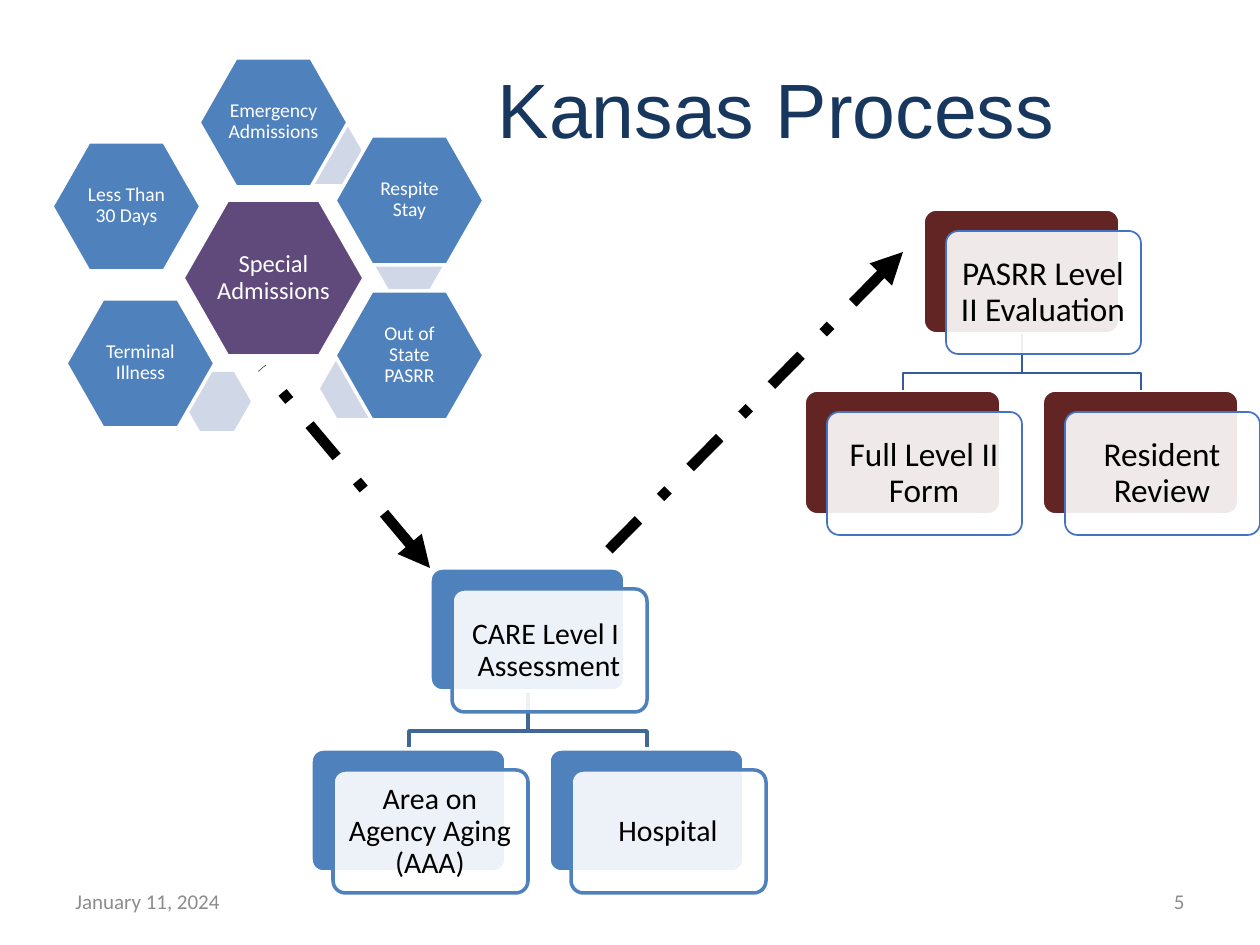
from dataclasses import dataclass
from typing import Optional

from lxml.etree import SubElement
from pptx import Presentation
from pptx.dml.color import RGBColor
from pptx.enum.dml import MSO_LINE
from pptx.enum.shapes import MSO_CONNECTOR, MSO_SHAPE
from pptx.enum.text import MSO_ANCHOR, PP_ALIGN
from pptx.oxml.ns import qn
from pptx.util import Pt

SCALE = 914400 / 126
HEX = {
    "white": "FFFFFF", "black": "000000", "navy": "17375E", "gray": "8C8C8C",
    "blue": "4F81BD", "pale": "D0D8E8", "purple": "604A7B", "maroon": "632523",
    "royal": "4472C4", "steel": "3F6797", "cobalt": "365B9D",
}


@dataclass
class Box:
    x: int
    y: int
    w: int
    h: int

    def emu(self) -> list[int]:
        return [px(v) for v in (self.x, self.y, self.w, self.h)]


@dataclass
class Petal:
    text: str
    x: int
    y: int
    link: Optional[tuple[int, int]] = None


@dataclass
class Tree:
    x: int
    y: int
    root: str
    kids: tuple[str, str]
    back: str
    edge: str
    wire: str
    width: int
    size: int
    inset: int


PETALS = [
    Petal("Emergency Admissions", 199, 58, (296, 125)),
    Petal("Respite Stay", 335, 136, (375, 236)),
    Petal("Out of State PASRR", 335, 291, (320, 359)),
    Petal("Terminal Illness", 66, 299, (183, 372)),
    Petal("Less Than 30 Days", 52, 142),
]
CARE = Tree(430, 568, "CARE Level I \nAssessment",
            ("Area on Agency Aging (AAA)", "Hospital"),
            "blue", "blue", "steel", 2, 17, 9)
PASRR = Tree(924, 210, "PASRR Level II Evaluation ",
             ("Full Level II Form", "Resident Review"),
             "maroon", "royal", "cobalt", 1, 19, 10)
CARD_W, CARD_H = 195, 123
KID_DX, KID_DY = 119, 181


def px(n: float) -> int:
    return round(n * SCALE)


def rgb(name: str) -> RGBColor:
    return RGBColor.from_string(HEX[name])


def stroke(shape, color: str, width: int) -> None:
    shape.line.color.rgb = rgb(color)
    shape.line.width = Pt(width)


def add_text(shapes, box: Box, text: str, size: float, color: str,
             align=PP_ALIGN.CENTER, font: str = "Calibri",
             inset: Optional[int] = None, space: Optional[float] = None):
    frame = shapes.add_textbox(*box.emu()).text_frame
    frame.word_wrap = True
    frame.vertical_anchor = MSO_ANCHOR.MIDDLE
    if inset is not None:
        frame.margin_left = frame.margin_right = px(inset)
        frame.margin_top = frame.margin_bottom = px(inset)
    para = frame.paragraphs[0]
    para.text = text
    para.alignment = align
    para.line_spacing = space
    para.font.name = font
    para.font.size = Pt(size)
    para.font.color.rgb = rgb(color)
    return frame


def add_block(shapes, kind, box: Box, adj: float, fill: str,
              edge: Optional[str] = None, width: int = 0):
    shape = shapes.add_shape(kind, *box.emu())
    shape.shadow.inherit = False
    shape.adjustments[0] = adj
    shape.fill.solid()
    shape.fill.fore_color.rgb = rgb(fill)
    if edge:
        stroke(shape, edge, width)
    else:
        shape.line.fill.background()
    return shape


def add_hex(shapes, box: Box, text: str, size: float, fill: str) -> None:
    """Draw a hexagon with a label box two thirds its size in the middle."""
    add_block(shapes, MSO_SHAPE.HEXAGON, box, 0.286, fill, "white", 2)
    w, h = round(box.w * 2 / 3), round(box.h * 2 / 3)
    label = Box(box.x + (box.w - w) // 2, box.y + (box.h - h) // 2, w, h)
    add_text(shapes, label, text, size, "white", inset=3, space=0.9)


def add_hub(slide) -> None:
    shapes = slide.shapes.add_group_shape().shapes
    add_hex(shapes, Box(183, 200, 181, 156), "Special Admissions", 14, "purple")
    for petal in PETALS:
        if petal.link:
            add_block(shapes, MSO_SHAPE.HEXAGON, Box(*petal.link, 68, 59), 0.289, "pale")
        add_hex(shapes, Box(petal.x, petal.y, 149, 129), petal.text, 11.2, "blue")


def add_card(shapes, tree: Tree, x: int, y: int, text: str) -> None:
    """Draw a solid card, a nearly opaque white one over it, and the text."""
    kind = MSO_SHAPE.ROUNDED_RECTANGLE
    add_block(shapes, kind, Box(x, y, CARD_W, CARD_H), 0.1,
              tree.back, "white", tree.width)
    front = add_block(shapes, kind, Box(x + 22, y + 21, CARD_W, CARD_H), 0.1,
                      "white", tree.edge, tree.width)
    tint = front._element.spPr.find(qn("a:solidFill"))[0]
    SubElement(tint, qn("a:alpha"), val="90000")
    add_text(shapes, Box(x + 25, y + 24, 188, 117), text, tree.size, "black",
             inset=tree.inset, space=0.9)


def add_wire(shapes, tree: Tree, dx: int) -> None:
    x, top, mid = tree.x + 98, tree.y + CARD_H + 1, tree.y + 163
    path = shapes.build_freeform(x, top, scale=SCALE)
    path.add_line_segments(
        [(x, mid), (x + dx, mid), (x + dx, tree.y + KID_DY)], close=False)
    wire = path.convert_to_shape()
    wire.shadow.inherit = False
    wire.fill.background()
    stroke(wire, tree.wire, tree.width)


def add_tree(slide, tree: Tree) -> None:
    shapes = slide.shapes.add_group_shape().shapes
    for dx in (KID_DX, -KID_DX):
        add_wire(shapes, tree, dx)
    add_card(shapes, tree, tree.x, tree.y, tree.root)
    for dx, text in zip((-KID_DX, KID_DX), tree.kids):
        add_card(shapes, tree, tree.x + dx, tree.y + KID_DY, text)


def add_arrow(slide, tip: tuple[int, int], tail: tuple[int, int]) -> None:
    ends = [px(v) for v in tip + tail]
    arrow = slide.shapes.add_connector(MSO_CONNECTOR.STRAIGHT, *ends)
    stroke(arrow, "black", 6)
    arrow.line.dash_style = MSO_LINE.DASH_DOT
    SubElement(arrow.line._get_or_add_ln(), qn("a:headEnd"), type="triangle")
    SubElement(arrow._element.spPr, qn("a:effectLst"))


def main() -> None:
    deck = Presentation()
    deck.slide_width, deck.slide_height = px(1260), px(945)
    slide = deck.slides.add_slide(deck.slide_layouts[6])
    title = add_text(slide.shapes, Box(84, 29, 1134, 158), "Kansas Process",
                     44, "navy", font="Arial")
    title.margin_left = px(263)
    add_text(slide.shapes, Box(63, 876, 294, 50), "January 11, 2024", 12, "gray",
             PP_ALIGN.LEFT)
    add_hub(slide)
    add_tree(slide, CARE)
    add_arrow(slide, (903, 252), (591, 568))
    add_tree(slide, PASRR)
    add_arrow(slide, (430, 568), (262, 368))
    add_text(slide.shapes, Box(903, 876, 294, 50), "5", 12, "gray", PP_ALIGN.RIGHT)
    deck.save("out.pptx")


if __name__ == "__main__":
    main()
